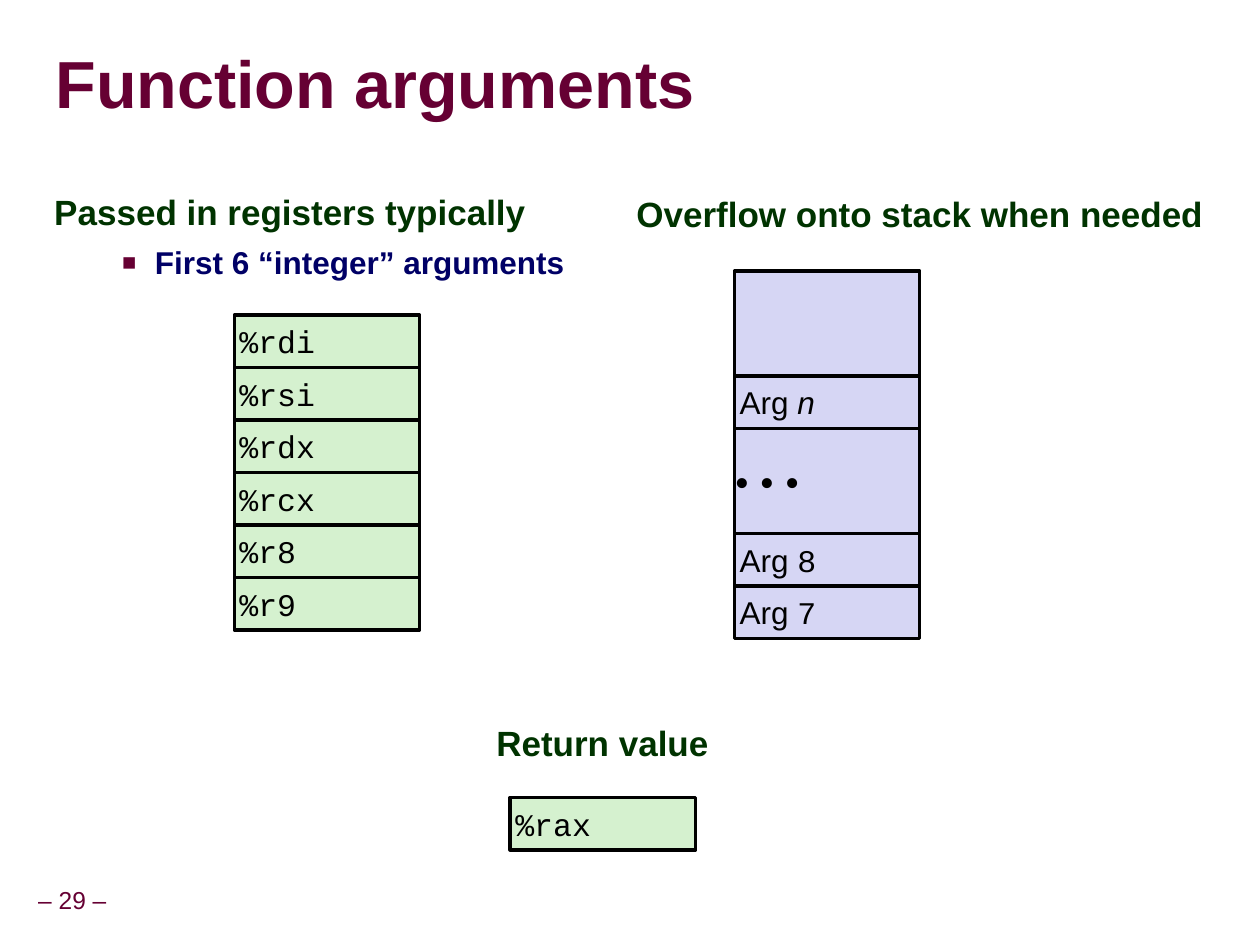
from dataclasses import dataclass
from typing import Any

from lxml.etree import SubElement
from pptx import Presentation
from pptx.dml.color import RGBColor as Rgb
from pptx.enum.shapes import MSO_SHAPE as Shape
from pptx.enum.text import MSO_ANCHOR as Anchor, MSO_AUTO_SIZE as Fit, PP_ALIGN as Align
from pptx.oxml.ns import qn
from pptx.util import Inches, Pt


@dataclass(frozen=True)
class Face:
    size: int
    color: str = "000000"
    name: str = "Arial"
    bold: bool = False


@dataclass(frozen=True)
class Theme:
    title: Face = Face(38, "660033", bold=True)
    head: Face = Face(20, "003300", bold=True)
    point: Face = Face(18, "000066", bold=True)
    page: Face = Face(14, "660033")
    label: Face = Face(18)
    code: Face = Face(18, name="Courier New")
    dots: Face = Face(24, name="Times New Roman")
    mark: str = "660033"
    green: str = "D5F1CF"
    lilac: str = "D6D6F4"
    line: str = "000000"


@dataclass(frozen=True)
class Cell:
    text: str = ""
    face: Face = Face(18)
    rows: int = 1
    inset: float = 0.04
    tail: str = ""
    mono: bool = False
    slant: bool = False


THEME = Theme()
ROW = 2.5 / 6
WIDTH = 1.47


def style(para: Any, face: Face) -> None:
    font = para.font
    font.size, font.name, font.bold = Pt(face.size), face.name, face.bold
    font.color.rgb = Rgb.from_string(face.color)


def indent(para: Any, left: float, first: float) -> Any:
    props = para._p.get_or_add_pPr()
    props.set("marL", str(Inches(left)))
    props.set("indent", str(Inches(first)))
    return props


def place(shape: Any, left: float, top: float, width: float, height: float) -> None:
    shape.left, shape.top = Inches(left), Inches(top)
    shape.width, shape.height = Inches(width), Inches(height)


def set_frame(frame: Any, anchor: Any, x: float, y: float, wrap: bool = True) -> None:
    frame.auto_size, frame.word_wrap = Fit.NONE, wrap
    frame.vertical_anchor = anchor
    frame.margin_left = frame.margin_right = Inches(x)
    frame.margin_top = frame.margin_bottom = Inches(y)


def write_head(frame: Any, text: str) -> None:
    set_frame(frame, Anchor.BOTTOM, 0.1, 0.05)
    para = frame.paragraphs[0]
    para.text, para.alignment = text, Align.LEFT
    para.line_spacing, para.space_before = 0.95, Pt(12.5)
    SubElement(indent(para, 0.42, -0.41), qn("a:buNone"))
    style(para, THEME.head)


def write_point(frame: Any, text: str) -> None:
    para = frame.add_paragraph()
    para.text, para.level, para.alignment = text, 1, Align.LEFT
    para.line_spacing, para.space_before = 1.0, Pt(5.6)
    props = indent(para, 0.81, -0.26)
    tint = SubElement(props, qn("a:buClr"))
    SubElement(tint, qn("a:srgbClr"), val=THEME.mark)
    SubElement(props, qn("a:buSzPct"), val="75000")
    SubElement(props, qn("a:buFont"), typeface="Arial")
    SubElement(props, qn("a:buChar"), char="■")
    style(para, THEME.point)


def draw_cell(shapes: Any, cell: Cell, left: float, top: float, fill: str) -> None:
    box = shapes.add_shape(Shape.RECTANGLE, Inches(left), Inches(top),
                           Inches(WIDTH), Inches(ROW * cell.rows))
    box.shadow.inherit = False
    box.fill.solid()
    box.fill.fore_color.rgb = Rgb.from_string(fill)
    box.line.color.rgb = Rgb.from_string(THEME.line)
    box.line.width = Pt(2)
    if not cell.text:
        return
    set_frame(box.text_frame, Anchor.MIDDLE, cell.inset, cell.inset)
    para = box.text_frame.paragraphs[0]
    para.alignment = Align.LEFT
    para.add_run().text = cell.text
    style(para, cell.face)
    if cell.tail:
        run = para.add_run()
        run.text = cell.tail
        if cell.mono:
            run.font.name = THEME.code.name
        if cell.slant:
            run.font.italic = True


def draw_stack(shapes: Any, cells: list[Cell], left: float, top: float, fill: str) -> None:
    """Draw the cells downwards, each starting where the last one ends."""
    for cell in cells:
        draw_cell(shapes, cell, left, top, fill)
        top += ROW * cell.rows


def main() -> None:
    deck = Presentation()
    deck.slide_width, deck.slide_height = Inches(10), Inches(7.5)
    slide = deck.slides.add_slide(deck.slide_layouts[3])
    shapes = slide.shapes
    title, left, right = slide.placeholders

    place(title, 0.44, 0.27, 9.53, 0.85)
    set_frame(title.text_frame, Anchor.MIDDLE, 0, 0)
    para = title.text_frame.paragraphs[0]
    para.text, para.alignment, para.line_spacing = "Function arguments", Align.LEFT, 0.87
    indent(para, 0.13, -0.13)
    style(para, THEME.title)

    place(left, 0.32, 1.34, 4.45, 0.94)
    write_head(left.text_frame, "Passed in registers typically")
    write_point(left.text_frame, "First 6 “integer” arguments")
    place(right, 4.94, 1.34, 4.81, 0.58)
    write_head(right.text_frame, "Overflow onto stack when needed")

    names = ("%rdi", "%rsi", "%rdx", "%rcx", "%r8", "%r9")
    draw_stack(shapes, [Cell(name, THEME.code) for name in names], 1.86, 2.5, THEME.green)

    stack = [
        Cell(rows=2),
        Cell("Arg ", THEME.label, tail="n", slant=True),
        Cell("• • •", THEME.dots, rows=2, inset=0),
        Cell("Arg ", THEME.label, tail="8", mono=True),
        Cell("Arg ", THEME.label, tail="7", mono=True),
    ]
    draw_stack(shapes.add_group_shape().shapes, stack, 5.83, 2.15, THEME.lilac)

    draw_cell(shapes, Cell("%rax", THEME.code), 4.05, 6.33, THEME.green)
    result = shapes.add_textbox(Inches(3.83), Inches(5.54), Inches(4.81), Inches(0.58))
    write_head(result.text_frame, "Return value")

    page = shapes.add_textbox(Inches(-0.09), Inches(7), Inches(1.33), Inches(0.31))
    set_frame(page.text_frame, Anchor.MIDDLE, 0.05, 0.05, wrap=False)
    para = page.text_frame.paragraphs[0]
    para.text, para.alignment, para.line_spacing = "– 29 –", Align.CENTER, 0.9
    style(para, THEME.page)

    deck.save("out.pptx")


if __name__ == "__main__":
    main()
